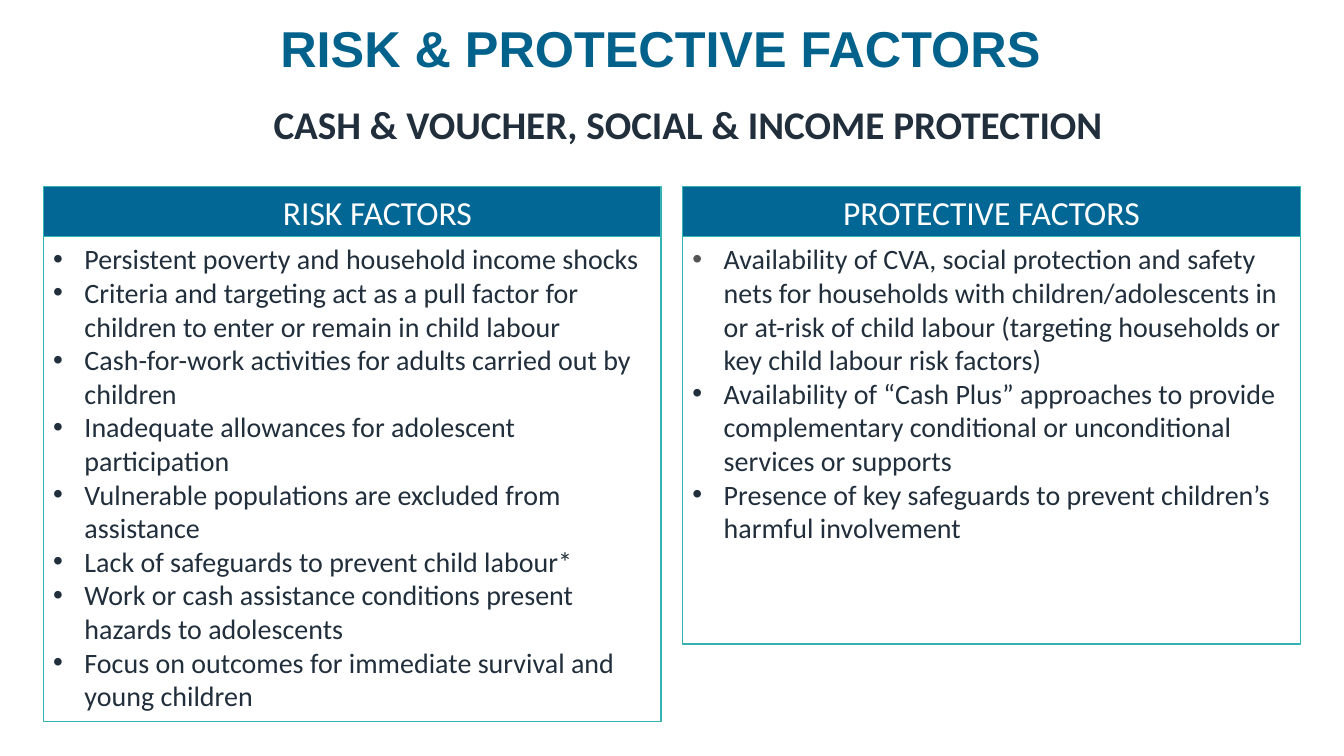
from lxml.etree import SubElement
from pptx import Presentation
from pptx.dml.color import RGBColor
from pptx.enum.shapes import MSO_SHAPE
from pptx.enum.text import MSO_ANCHOR, PP_ALIGN
from pptx.oxml.ns import qn
from pptx.util import Cm, Pt

HUES = {"title": "02628C", "head": "026794", "edge": "35B2B4",
        "ink": "212E3B", "grey": "545554", "white": "FFFFFF"}

RISKS = [
    "Persistent poverty and household income shocks",
    "Criteria and targeting act as a pull factor for children to enter or remain in child labour",
    "Cash-for-work activities for adults carried out by children",
    "Inadequate allowances for adolescent participation",
    "Vulnerable populations are excluded from assistance",
    "Lack of safeguards to prevent child labour*",
    "Work or cash assistance conditions present hazards to adolescents",
    "Focus on outcomes for immediate survival and young children",
]
GUARDS = [
    "Availability of CVA, social protection and safety nets for households with "
    "children/adolescents in or at-risk of child labour (targeting households or "
    "key child labour risk factors)",
    "Availability of “Cash Plus” approaches to provide complementary conditional "
    "or unconditional services or supports",
    "Presence of key safeguards to prevent children’s harmful involvement",
]


class Page:
    font = "Calibri"
    top, wide, head = 4.7, 15.57, 1.27

    def __init__(self, deck):
        self.slide = deck.slides.add_slide(deck.slide_layouts[5])

    def style(self, para, size, hue, bold=False, font=None, align=PP_ALIGN.LEFT):
        para.alignment = align
        for run in para.runs:
            run.font.name = font or self.font
            run.font.size = Pt(size)
            run.font.bold = bold
            run.font.color.rgb = RGBColor.from_string(HUES[hue])

    def indent(self, para, left, first=0):
        props = para._p.get_or_add_pPr()
        props.set("marL", str(Cm(left)))
        props.set("indent", str(Cm(first)))
        return props

    def bullet(self, para, hue):
        props = self.indent(para, 0.79, -0.79)
        color = SubElement(props, qn("a:buClr"))
        SubElement(color, qn("a:srgbClr"), val=HUES[hue])
        SubElement(props, qn("a:buFont"), typeface="Arial")
        SubElement(props, qn("a:buChar"), char="•")

    def title(self, text):
        shape = self.slide.shapes.title
        shape.left, shape.top, shape.width, shape.height = map(Cm, (5.69, 0, 21.92, 2.57))
        frame = shape.text_frame
        frame.text = text
        frame.vertical_anchor = MSO_ANCHOR.MIDDLE
        para = frame.paragraphs[0]
        para.line_spacing = 0.9
        self.style(para, 36, "title", True, "Arial", PP_ALIGN.CENTER)

    def lead(self, text):
        box = self.slide.shapes.add_textbox(*map(Cm, (4.09, 2.41, 25.22, 2.64)))
        frame = box.text_frame
        frame.word_wrap = True
        frame.text = text
        para = frame.paragraphs[0]
        self.indent(para, 1.27)
        self.style(para, 28, "ink", True, align=PP_ALIGN.CENTER)

    def panel(self, left, top, high, text, fill=None):
        shape = self.slide.shapes.add_shape(
            MSO_SHAPE.RECTANGLE, *map(Cm, (left, top, self.wide, high)))
        shape.shadow.inherit = False
        if fill:
            shape.fill.solid()
            shape.fill.fore_color.rgb = RGBColor.from_string(HUES[fill])
        else:
            shape.fill.background()
        shape.line.color.rgb = RGBColor.from_string(HUES["edge"])
        shape.line.width = Pt(0.75)
        frame = shape.text_frame
        frame.word_wrap = True
        frame.vertical_anchor = MSO_ANCHOR.TOP
        frame.text = text
        return frame.paragraphs

    def column(self, left, high, name, items, first="ink", inset=0):
        rows = self.panel(left, self.top + self.head, high, "\n".join(items))
        for num, para in enumerate(rows):
            self.style(para, 20, "ink")
            self.bullet(para, "ink" if num else first)
        para = self.panel(left, self.top, self.head, name, "head")[0]
        self.indent(para, inset)
        self.style(para, 24, "white", align=PP_ALIGN.CENTER)


def main():
    deck = Presentation()
    deck.slide_width, deck.slide_height = Cm(33.87), Cm(19.05)
    page = Page(deck)
    page.title("RISK & PROTECTIVE FACTORS")
    page.column(1.09, 12.22, "RISK FACTORS", RISKS, inset=1.27)
    page.column(17.2, 10.26, "PROTECTIVE FACTORS", GUARDS, first="grey")
    page.lead("CASH & VOUCHER, SOCIAL & INCOME PROTECTION")
    deck.save("out.pptx")


if __name__ == "__main__":
    main()
